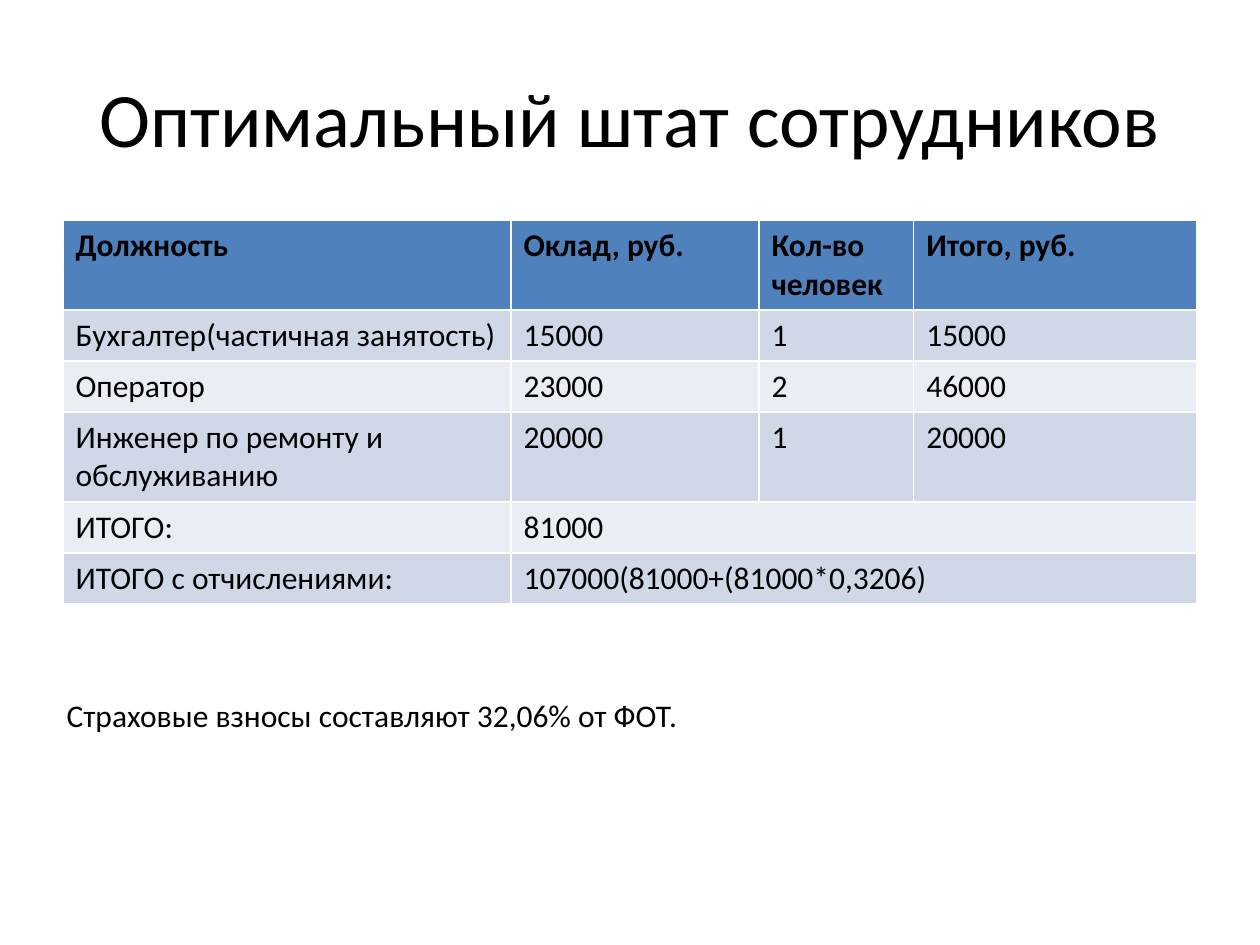
from pptx import Presentation
from pptx.dml.color import RGBColor
from pptx.enum.text import MSO_ANCHOR, PP_ALIGN
from pptx.util import Inches, Pt

LEFT, CENTER = PP_ALIGN.LEFT, PP_ALIGN.CENTER
MIDDLE = MSO_ANCHOR.MIDDLE
WIDE, HIGH = 10, 7.5
HEAD, BANDS = "4F81BD", ("D0D8E8", "E9EDF4")
COLS = (3.56, 1.97, 1.23, 2.25)
ROW = 0.405
ROWS = (
    ("Должность", "Оклад, руб.", "Кол-во человек", "Итого, руб."),
    ("Бухгалтер(частичная занятость)", "15000", "1", "15000"),
    ("Оператор", "23000", "2", "46000"),
    ("Инженер по ремонту и обслуживанию", "20000", "1", "20000"),
    ("ИТОГО:", "81000"),
    ("ИТОГО с отчислениями:", "107000(81000+(81000*0,3206)"),
)


def color(code):
    return RGBColor.from_string(code)


def share(x, y, w, h):
    """Turn shares of the slide's size into a box."""
    return [Inches(v) for v in (x * WIDE, y * HIGH, w * WIDE, h * HIGH)]


def write(frame, text, size=18, bold=False, align=LEFT):
    frame.text = text
    para = frame.paragraphs[0]
    para.alignment = align
    font = para.runs[0].font
    look = {"name": "Calibri", "size": Pt(size), "bold": bold}
    for key, value in look.items():
        setattr(font, key, value)
    font.color.rgb = color("000000")


def add_title(slide, box, text):
    title = slide.shapes.title
    for key, value in zip(("left", "top", "width", "height"), box):
        setattr(title, key, value)
    title.text_frame.vertical_anchor = MIDDLE
    write(title.text_frame, text, 44, align=CENTER)


def add_staff(slide, box):
    left, top, width, _ = box
    grid = slide.shapes.add_table(len(ROWS), len(COLS), left, top, width,
                                  Inches(ROW * len(ROWS))).table
    for col, part in zip(grid.columns, COLS):
        col.width = int(width * part / sum(COLS))
    for r, texts in enumerate(ROWS):
        fill = BANDS[(r - 1) % 2] if r else HEAD
        for cell in grid.rows[r].cells:
            cell.fill.solid()
            cell.fill.fore_color.rgb = color(fill)
        # A short row's last value spans the columns left over
        if len(texts) < len(COLS):
            grid.cell(r, len(texts) - 1).merge(grid.cell(r, len(COLS) - 1))
        for c, text in enumerate(texts):
            write(grid.cell(r, c).text_frame, text, bold=r == 0)


def add_note(slide, box, text):
    frame = slide.shapes.add_textbox(*box).text_frame
    frame.word_wrap = True
    write(frame, text)


def main():
    deck = Presentation()
    deck.slide_width, deck.slide_height = Inches(WIDE), Inches(HIGH)
    slide = deck.slides.add_slide(deck.slide_layouts[5])
    # Heading
    add_title(slide, share(0.05, 0.04, 0.9, 1 / 6), "Оптимальный штат сотрудников")
    # Staff and pay
    add_staff(slide, share(0.05, 7 / 30, 0.9, 0.4))
    # Remark on contributions
    add_note(slide, share(0.043, 0.73, 0.87, 0.05),
             "Страховые взносы составляют 32,06% от ФОТ.")
    deck.save("out.pptx")


if __name__ == "__main__":
    main()
